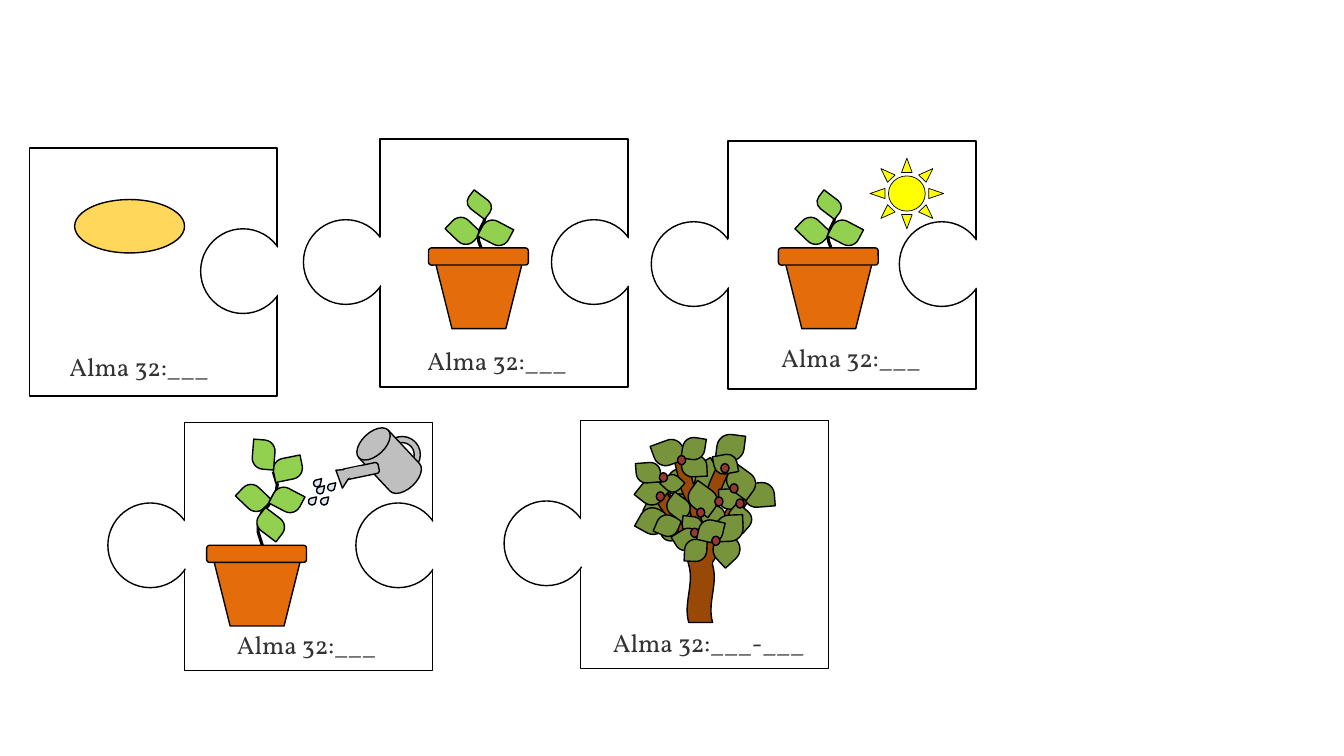
"""Puzzle-piece worksheet showing a seed growing into a tree in Alma 32."""
import math

from pptx import Presentation
from pptx.dml.color import RGBColor
from pptx.enum.shapes import MSO_SHAPE
from pptx.enum.text import MSO_AUTO_SIZE
from pptx.util import Emu, Pt

RECT, OVAL, SUN = MSO_SHAPE.RECTANGLE, MSO_SHAPE.OVAL, MSO_SHAPE.SUN
LEAF, TRAPEZOID = MSO_SHAPE.ROUND_2_DIAG_RECTANGLE, MSO_SHAPE.TRAPEZOID
ROUNDED, DONUT = MSO_SHAPE.ROUNDED_RECTANGLE, MSO_SHAPE.DONUT
CAN, TRIANGLE = MSO_SHAPE.FLOWCHART_MAGNETIC_DISK, MSO_SHAPE.ISOSCELES_TRIANGLE
TEAR, WAVE = MSO_SHAPE.TEAR, MSO_SHAPE.DOUBLE_WAVE
FIT_SHAPE = MSO_AUTO_SIZE.SHAPE_TO_FIT_TEXT

PX = 9144
FONT = "Vollkorn"
COLORS = {
    "paper": "FFFFFF", "outline": "000000", "text": "333333", "seed": "FFD85B",
    "sprout": "92D050", "pot": "E46C0A", "sun": "FFFF00", "metal": "BFBFBF",
    "water": "DCE6F2", "foliage": "77933C", "bark": "984807", "berry": "953735",
}

SPROUT_STEM = [(478, 259), (479, 256), (479, 251), (475, 240), (474, 235), (475, 234),
               (476, 228), (478, 224), (480, 220), (481, 216), (481, 212), (479, 203)]
PLANT_STEM = [(259, 557), (261, 552), (261, 544), (256, 528), (256, 520), (257, 517),
              (260, 507), (266, 502), (270, 494), (274, 487), (275, 481), (271, 468)]
STEM_TILT = 339.5

BACK_LEAVES = [
    (706, 472, 24, 30, 85.5), (686, 459, 27, 26, 329.9), (662, 465, 27, 26, 10.4),
    (663, 490, 22, 22, 15.3), (642, 488, 27, 26, 26.4), (634, 504, 27, 26, 28.9),
    (657, 514, 20, 24, 71.7),
]
BRANCHES = [
    (638, 547, 114, 27, 270), (620, 501, 95, 15, 235.5), (671, 517, 95, 15, 298.7),
    (659, 486, 95, 15, 289.4), (638, 484, 95, 15, 252.4),
]
CROWN_LEAVES = [
    (634, 476, 25, 25, 38.2), (711, 431, 27, 26, 187.3), (651, 434, 24, 30, 69.8),
    (658, 471, 18, 17, 42.2), (633, 457, 20, 24, 85.5), (678, 450, 21, 25, 87.1),
    (651, 511, 22, 21, 22.8), (663, 491, 20, 24, 126.4), (697, 500, 20, 24, 87.1),
    (685, 480, 24, 30, 126), (677, 434, 22, 22, 8.9), (715, 483, 20, 24, 87.1),
    (741, 476, 24, 30, 85.5), (723, 463, 24, 30, 126), (710, 449, 19, 23, 79.4),
    (724, 502, 20, 24, 130.9),
]
CROWN_BERRIES = [(651, 488), (730, 495), (724, 480), (654, 469),
                 (672, 452), (715, 460), (691, 504), (709, 493)]
LOW_LEAVES = [(678, 511, 17, 20, 276.1), (671, 523, 20, 24, 238.6)]
FRONT_LEAVES = [
    (707, 532, 27, 26, 137.2), (710, 511, 27, 26, 177.7),
    (679, 535, 22, 22, 182.6), (693, 516, 24, 22, 193.2),
]
DROPS = [(314, 483), (325, 480), (311, 476), (306, 494), (318, 494)]


def color(name):
    return RGBColor.from_string(COLORS[name])


class PuzzleSlide:
    """Draws the puzzle pieces, one group each, on the current slide."""

    def __init__(self, slide):
        self.slide = slide
        self.group = None

    def shape(self, kind, box, fill, line="outline", weight=1, tilt=0, adjust=()):
        item = self.group.shapes.add_shape(kind, *(Emu(n * PX) for n in box))
        item.shadow.inherit = False
        item.rotation = tilt
        for index, value in enumerate(adjust):
            item.adjustments[index] = value
        item.fill.solid()
        item.fill.fore_color.rgb = color(fill)
        if line:
            item.line.color.rgb = color(line)
            item.line.width = Pt(weight)
        else:
            item.line.fill.background()

    def piece(self, x, y, tab=True, socket=True):
        self.group = self.slide.shapes.add_group_shape()
        self.shape(RECT, (x, y, 246, 246), "paper")
        if tab:
            self.shape(OVAL, (x - 76, y + 80, 84, 84), "paper")
        if socket:
            self.shape(OVAL, (x + 170, y + 80, 84, 84), "paper")
            self.shape(OVAL, (x + 240, y + 80, 84, 84), "paper", "paper")
        if tab:
            self.shape(OVAL, (x - 6, y + 79, 84, 84), "paper", "paper")

    def caption(self, x, y, wording, width=162):
        box = self.group.shapes.add_textbox(*(Emu(n * PX) for n in (x, y, width, 40)))
        frame = box.text_frame
        frame.word_wrap = False
        frame.auto_size = FIT_SHAPE
        frame.text = wording
        font = frame.paragraphs[0].runs[0].font
        font.name, font.size, font.color.rgb = FONT, Pt(18), color("text")

    def leaves(self, places, fill):
        for *box, tilt in places:
            self.shape(LEAF, box, fill, tilt=tilt, adjust=(0.5, 0))

    def berries(self, places):
        for x, y in places:
            self.shape(OVAL, (x, y, 8, 9), "berry")

    def stem(self, points, box):
        left, top, width, height = box
        cx, cy = left + width / 2, top + height / 2
        turn = math.radians(-STEM_TILT)
        cos, sin = math.cos(turn), math.sin(turn)
        upright = [(round((cx + (x - cx) * cos - (y - cy) * sin) * PX),
                    round((cy + (x - cx) * sin + (y - cy) * cos) * PX))
                   for x, y in points]
        builder = self.group.shapes.build_freeform(*upright[0], scale=1.0)
        builder.add_line_segments(upright[1:], close=False)
        stalk = builder.convert_to_shape()
        stalk.rotation = STEM_TILT
        stalk.shadow.inherit = False
        stalk.fill.background()
        stalk.line.color.rgb = color("outline")
        stalk.line.width = Pt(2.25)

    def pot(self, x, y):
        self.shape(TRAPEZOID, (x, y, 92, 77), "pot", tilt=180)
        self.shape(ROUNDED, (x - 4, y - 3, 99, 17), "pot")

    def sprout(self, dx):
        self.leaves([(445 + dx, 218, 29, 22, 43.7)], "sprout")
        self.stem([(x + dx, y) for x, y in SPROUT_STEM], (469 + dx, 205, 20, 52))
        self.leaves([(477 + dx, 220, 29, 22, 27.8)], "sprout")
        self.pot(429 + dx, 249)
        self.leaves([(467 + dx, 190, 17, 26, 307.3)], "sprout")

    def plant(self):
        self.leaves([(237, 483, 29, 22, 43.7)], "sprout")
        self.stem(PLANT_STEM, (244, 473, 43, 79))
        self.leaves([(270, 485, 29, 22, 27.8)], "sprout")
        self.pot(209, 544)
        self.leaves([(258, 506, 21, 29, 307.3), (271, 454, 29, 22, 348.6),
                     (247, 440, 29, 22, 274.6)], "sprout")

    def watering_can(self):
        self.shape(DONUT, (381, 433, 36, 36), "metal", tilt=316.9, adjust=(0.169,))
        self.shape(CAN, (366, 423, 40, 68), "metal", tilt=316.9)
        self.shape(ROUNDED, (352, 449, 11, 37), "metal", tilt=258.2, adjust=(0.258,))
        self.shape(TRIANGLE, (328, 463, 23, 15), "metal", tilt=302.6)
        self.shape(ROUNDED, (346, 459, 9, 19), "metal", None, tilt=258.2, adjust=(0.258,))
        for x, y in DROPS:
            self.shape(TEAR, (x, y, 7, 7), "water", adjust=(1.286,))

    def tree(self):
        self.leaves(BACK_LEAVES, "foliage")
        for *box, tilt in BRANCHES:
            self.shape(WAVE, box, "bark", tilt=tilt)
        self.shape(OVAL, (687, 522, 19, 67), "bark", None)
        self.leaves(CROWN_LEAVES, "foliage")
        self.berries(CROWN_BERRIES)
        self.leaves(LOW_LEAVES, "foliage")
        self.berries([(685, 524)])
        self.leaves(FRONT_LEAVES, "foliage")
        self.berries([(706, 532)])


def main():
    deck = Presentation()
    deck.slide_width, deck.slide_height = Emu(1333 * PX), Emu(750 * PX)
    puzzle = PuzzleSlide(deck.slides.add_slide(deck.slide_layouts[6]))

    puzzle.piece(29, 147, tab=False)
    puzzle.shape(OVAL, (74, 198, 109, 53), "seed")
    puzzle.caption(59, 344, "Alma 32:___")

    puzzle.piece(377, 138)
    puzzle.sprout(0)
    puzzle.caption(414, 338, "Alma 32:___")

    puzzle.piece(722, 140)
    puzzle.shape(SUN, (863, 157, 73, 70), "sun", weight=0.5)
    puzzle.sprout(347)
    puzzle.caption(765, 335, "Alma 32:___")

    puzzle.piece(183, 419)
    puzzle.watering_can()
    puzzle.plant()
    puzzle.caption(225, 619, "Alma 32:___")

    puzzle.piece(576, 417, socket=False)
    puzzle.tree()
    puzzle.caption(598, 617, "Alma 32:___-___", width=212)

    deck.save("out.pptx")


if __name__ == "__main__":
    main()
